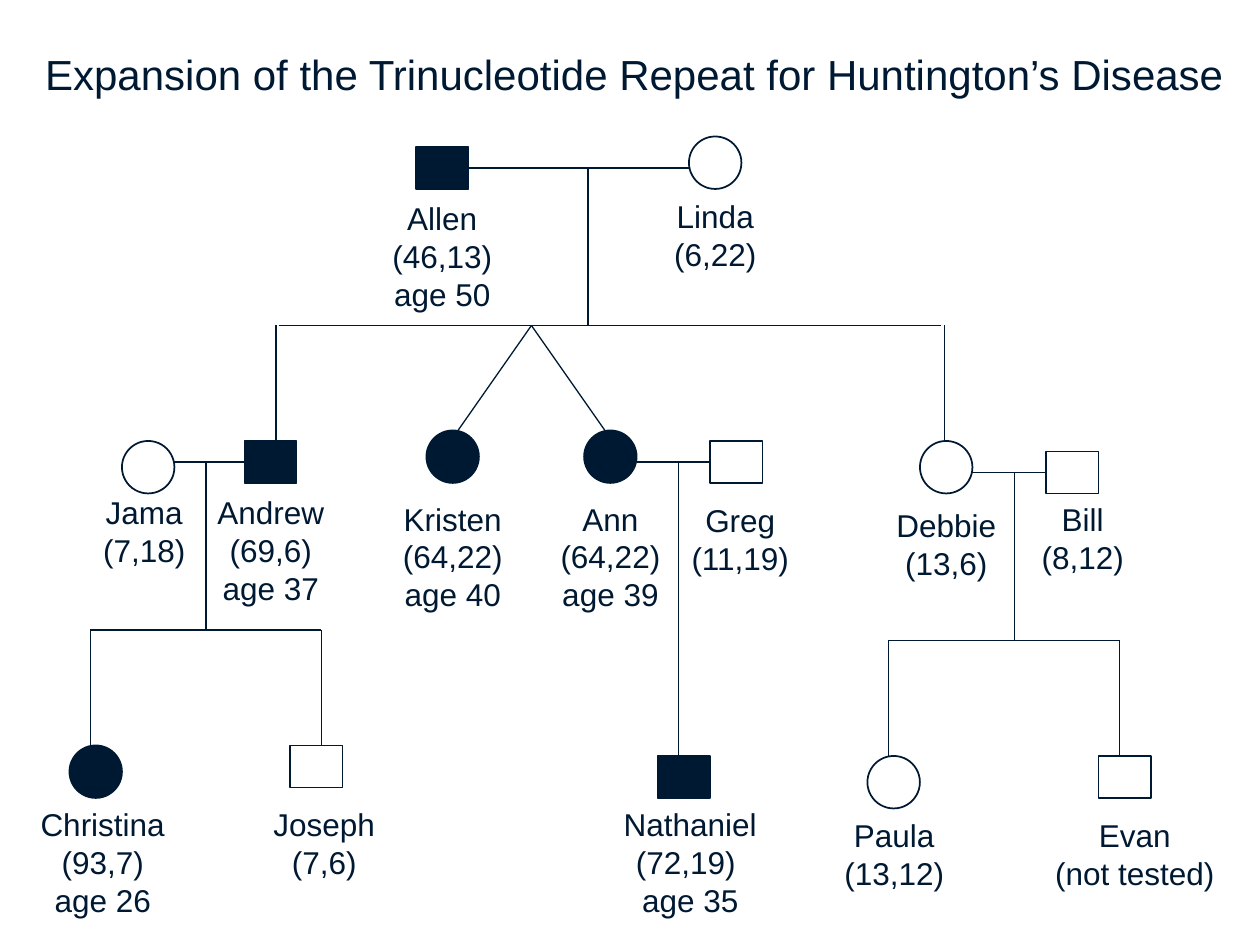
from dataclasses import dataclass

from lxml import etree
from pptx import Presentation
from pptx.dml.color import RGBColor
from pptx.enum.shapes import MSO_CONNECTOR, MSO_SHAPE
from pptx.enum.text import MSO_AUTO_SIZE, PP_ALIGN
from pptx.oxml.ns import qn
from pptx.util import Pt

OVAL, RECT = MSO_SHAPE.OVAL, MSO_SHAPE.RECTANGLE
STRAIGHT = MSO_CONNECTOR.STRAIGHT
LEFT, CENTER = PP_ALIGN.LEFT, PP_ALIGN.CENTER


@dataclass(frozen=True)
class Theme:
    ink: RGBColor = RGBColor(0x00, 0x19, 0x32)
    font: str = "Arial"
    title_size: float = 24
    label_size: float = 18
    thin: float = 0.75
    thick: float = 1


@dataclass(frozen=True)
class Person:
    """Position is relative to the family box, label to the symbol's top centre."""
    sex: str
    affected: bool
    x: float
    y: float
    lines: tuple
    label_w: float
    label_y: float
    label_dx: float = 0


THEME = Theme()
SYMBOL_W = 30
SYMBOLS = {"F": (OVAL, 30, THEME.thick), "M": (RECT, 24, THEME.thin)}
BAR_Y = 108  # from the top of a family box to its sibling bar
LINE_H, INSET_H = 21.6, 7.2


def add_text(slide, box, lines, size, align):
    tf = slide.shapes.add_textbox(*map(Pt, box)).text_frame
    tf.word_wrap = False
    tf.auto_size = MSO_AUTO_SIZE.SHAPE_TO_FIT_TEXT
    for i, line in enumerate(lines):
        p = tf.paragraphs[0] if i == 0 else tf.add_paragraph()
        p.alignment = align
        r = p.add_run()
        r.text = line
        for name, value in {"name": THEME.font, "size": Pt(size)}.items():
            setattr(r.font, name, value)
        r.font.color.rgb = THEME.ink


def add_line(slide, x1, y1, x2, y2):
    line = slide.shapes.add_connector(STRAIGHT, *map(Pt, (x1, y1, x2, y2)))
    line.line.color.rgb = THEME.ink
    line.line.width = Pt(THEME.thin)
    etree.SubElement(line._element.spPr, qn("a:effectLst"))


def add_person(slide, origin, person):
    x, y = origin[0] + person.x, origin[1] + person.y
    preset, height, weight = SYMBOLS[person.sex]
    sp = slide.shapes.add_shape(preset, *map(Pt, (x, y, SYMBOL_W, height)))
    sp.shadow.inherit = False
    if person.affected:
        sp.fill.solid()
        sp.fill.fore_color.rgb = THEME.ink
    else:
        sp.fill.background()
    sp.line.color.rgb = THEME.ink
    sp.line.width = Pt(weight)
    left = x + SYMBOL_W / 2 + person.label_dx - person.label_w / 2
    height = INSET_H + LINE_H * len(person.lines)
    add_text(slide, (left, y + person.label_y, person.label_w, height),
             person.lines, THEME.label_size, CENTER)


def add_family(slide, box, union, drop, people, bar_inset=0, twins=None):
    """Draw a couple and their children; the box runs from first to last child's stem."""
    x, y, w, h = box
    start, end, union_y = union
    add_line(slide, x + start, y + union_y, x + end, y + union_y)
    bar = y + (BAR_Y if w else h)
    add_line(slide, x + drop, y + union_y, x + drop, bar)
    if w:
        add_line(slide, x + bar_inset, bar, x + w - bar_inset, bar)
        for stem in (x, x + w):
            add_line(slide, stem, bar, stem, y + h)
    if twins:
        apex, spread, depth = twins
        for side in (-spread, spread):
            add_line(slide, x + apex, bar, x + apex + side, bar + depth)
    for person in people:
        add_person(slide, (x, y), person)


FAMILIES = [
    dict(box=(157.7, 78, 382, 174), union=(110, 236, 18), drop=178.3,
         bar_inset=2, twins=(146, 42, 60), people=[
             Person("M", True, 80, 6, ("Allen", "(46,13)", "age 50"), 73, 26.2),
             Person("F", False, 236, 0, ("Linda", "(6,22)"), 63, 31),
             Person("F", True, 86, 168, ("Kristen", "(64,22)", "age 40"), 73, 36)]),
    dict(box=(51.7, 252, 132, 174), union=(48, 90, 12), drop=66, people=[
        Person("F", False, 18, 0, ("Jama", "(7,18)"), 63, 26.2, -2.3),
        Person("M", True, 88, 0, ("Andrew", "(69,6)", "age 37"), 78, 26.2),
        Person("F", True, -12, 174, ("Christina", "(93,7)", "age 26"), 88, 30.7, 4),
        Person("M", False, 114, 174, ("Joseph", "(7,6)"), 75, 30.7, 4.6)]),
    dict(box=(387.8, 252, 0, 180), union=(-24, 18, 12), drop=0, people=[
        Person("F", True, -54, -6, ("Ann", "(64,22)", "age 39"), 73, 36),
        Person("M", False, 18, 0, ("Greg", "(11,19)"), 73, 31, 2.2),
        Person("M", True, -12, 180, ("Nathaniel", "(72,19) ", "age 35"), 93, 24.7, 3.6)]),
    dict(box=(507.7, 258, 132, 174), union=(48, 90, 12), drop=72, people=[
        Person("F", False, 18, -6, ("Debbie", "(13,6)"), 73, 33.7),
        Person("M", False, 90, 0, ("Bill", "(8,12)"), 63, 24.2, 6),
        Person("F", False, -12, 174, ("Paula", "(13,12)"), 73, 31, 0.3),
        Person("M", False, 120, 174, ("Evan", "(not tested)"), 108, 31, 5.8)]),
]


def main():
    prs = Presentation()
    prs.slide_width, prs.slide_height = Pt(720), Pt(540)
    slide = prs.slides.add_slide(prs.slide_layouts[6])
    add_text(slide, (18.7, 24, 690.5, 36),
             ["Expansion of the Trinucleotide Repeat for Huntington’s Disease"],
             THEME.title_size, LEFT)
    for family in FAMILIES:
        add_family(slide, **family)
    prs.save("out.pptx")


if __name__ == "__main__":
    main()
